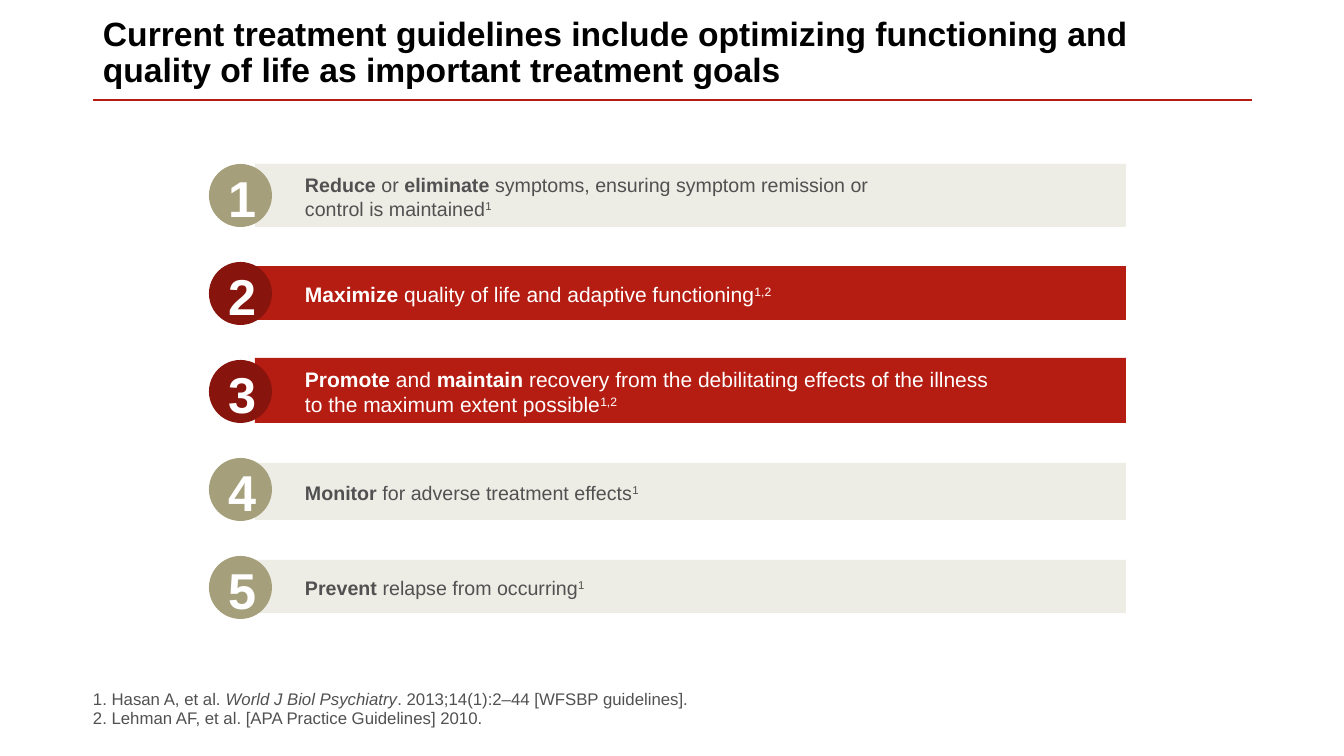
from lxml import etree
from pptx import Presentation
from pptx import util as u
from pptx.dml.color import RGBColor
from pptx.enum import shapes, text
from pptx.oxml import ns

PX = 914400 / 100.8
FONT = "Arial"
COLORS = {
    "black": "000000", "white": "FFFFFF", "gray": "515151", "red": "B51C12",
    "dark_red": "88150D", "sand": "EDECE5", "olive": "A5A07B",
}
STYLES = {
    "plain": {"bar": "sand", "circle": "olive", "text": "gray", "size": 14},
    "key": {"bar": "red", "circle": "dark_red", "text": "white", "size": 15},
}
TITLE = ("Current treatment guidelines include optimizing functioning and "
         "quality of life as important treatment goals")
GOALS = [
    ("plain", 164, 63, [("Reduce", "b"), (" or ", ""), ("eliminate", "b"),
                        (" symptoms, ensuring symptom remission or \ncontrol is maintained", ""),
                        ("1", "sup")]),
    ("key", 266, 54, [("Maximize", "b"), (" quality of life and adaptive functioning", ""),
                      ("1,2", "sup")]),
    ("key", 358, 65, [("Promote", "b"), (" and ", ""), ("maintain", "b"),
                      (" recovery from the debilitating effects of the illness \n"
                       "to the maximum extent possible", ""), ("1,2", "sup")]),
    ("plain", 463, 57, [("Monitor ", "b"), ("for adverse treatment effects", ""), ("1", "sup")]),
    ("plain", 560, 53, [("Prevent ", "b"), ("relapse from occurring", ""), ("1", "sup")]),
]
REFERENCES = [
    [("1. Hasan A, et al. ", ""), ("World J Biol Psychiatry", "i"),
     (". 2013;14(1):2–44 [WFSBP guidelines].", "")],
    [("2. Lehman AF, et al. [APA Practice Guidelines] 2010.", "")],
]
BAR_LEFT, BAR_WIDTH = 255, 871
CIRCLE_LEFT, CIRCLE_TOP, CIRCLE_STEP, CIRCLE_SIZE = 209, 164, 98, 63


def px(*values):
    return [u.Emu(round(v * PX)) for v in values]


def rgb(name):
    return RGBColor.from_string(COLORS[name])


def set_frame(tf, anchor, margins):
    tf.word_wrap = True
    tf.auto_size = text.MSO_AUTO_SIZE.NONE
    tf.vertical_anchor = anchor
    tf.margin_left, tf.margin_top, tf.margin_right, tf.margin_bottom = px(*margins)


def write(p, runs, size, color, bold=None, align=text.PP_ALIGN.LEFT):
    p.alignment = align
    p.font.name = FONT
    p.font.size = u.Pt(size)
    p.font.bold = bold
    p.font.color.rgb = rgb(color)
    for content, style in runs:
        for i, line in enumerate(content.split("\n")):
            if i:
                p.add_line_break()
            r = p.add_run()
            r.text = line
            if style == "b":
                r.font.bold = True
            elif style == "i":
                r.font.italic = True
            elif style == "sup":
                r._r.get_or_add_rPr().set("baseline", "30000")


def add_filled(s, kind, box, fill, margins):
    sp = s.shapes.add_shape(kind, *px(*box))
    sp.shadow.inherit = False
    sp.fill.solid()
    sp.fill.fore_color.rgb = rgb(fill)
    sp.line.fill.background()
    set_frame(sp.text_frame, text.MSO_ANCHOR.MIDDLE, margins)
    return sp.text_frame.paragraphs[0]


def add_title(s):
    sp = s.shapes.title
    sp.left, sp.top, sp.width, sp.height = px(93, 12, 1159, 58)
    set_frame(sp.text_frame, text.MSO_ANCHOR.TOP, (10, 5, 10, 5))
    p = sp.text_frame.paragraphs[0]
    p.line_spacing = 0.9
    write(p, [(TITLE, "")], 24, "black", bold=True)
    rule = s.shapes.add_connector(shapes.MSO_CONNECTOR.STRAIGHT, *px(93, 100, 1252, 100))
    rule.line.color.rgb = rgb("red")
    rule.line.width = u.Pt(1.5)
    etree.SubElement(rule._element.spPr, ns.qn("a:effectLst"))


def add_goals(s):
    for i, (style, top, height, runs) in enumerate(GOALS):
        look = STYLES[style]
        p = add_filled(s, shapes.MSO_SHAPE.RECTANGLE, (BAR_LEFT, top, BAR_WIDTH, height),
                       look["bar"], (50, 12, 10, 10))
        write(p, runs, look["size"], look["text"])
        p = add_filled(s, shapes.MSO_SHAPE.OVAL,
                       (CIRCLE_LEFT, CIRCLE_TOP + i * CIRCLE_STEP, CIRCLE_SIZE, CIRCLE_SIZE),
                       look["circle"], (10, 14, 10, 10))
        write(p, [(str(i + 1), "")], 36, "white", bold=True, align=text.PP_ALIGN.CENTER)


def add_references(s):
    tf = s.shapes.add_textbox(*px(93, 688, 618, 40)).text_frame
    set_frame(tf, text.MSO_ANCHOR.BOTTOM, (0, 0, 0, 0))
    for i, runs in enumerate(REFERENCES):
        p = tf.add_paragraph() if i else tf.paragraphs[0]
        p.line_spacing = u.Pt(14)
        write(p, runs, 12, "gray")


def main():
    prs = Presentation()
    prs.slide_width, prs.slide_height = px(1344, 756)
    s = prs.slides.add_slide(prs.slide_layouts[5])
    add_title(s)
    add_goals(s)
    add_references(s)
    prs.save("out.pptx")


if __name__ == "__main__":
    main()
